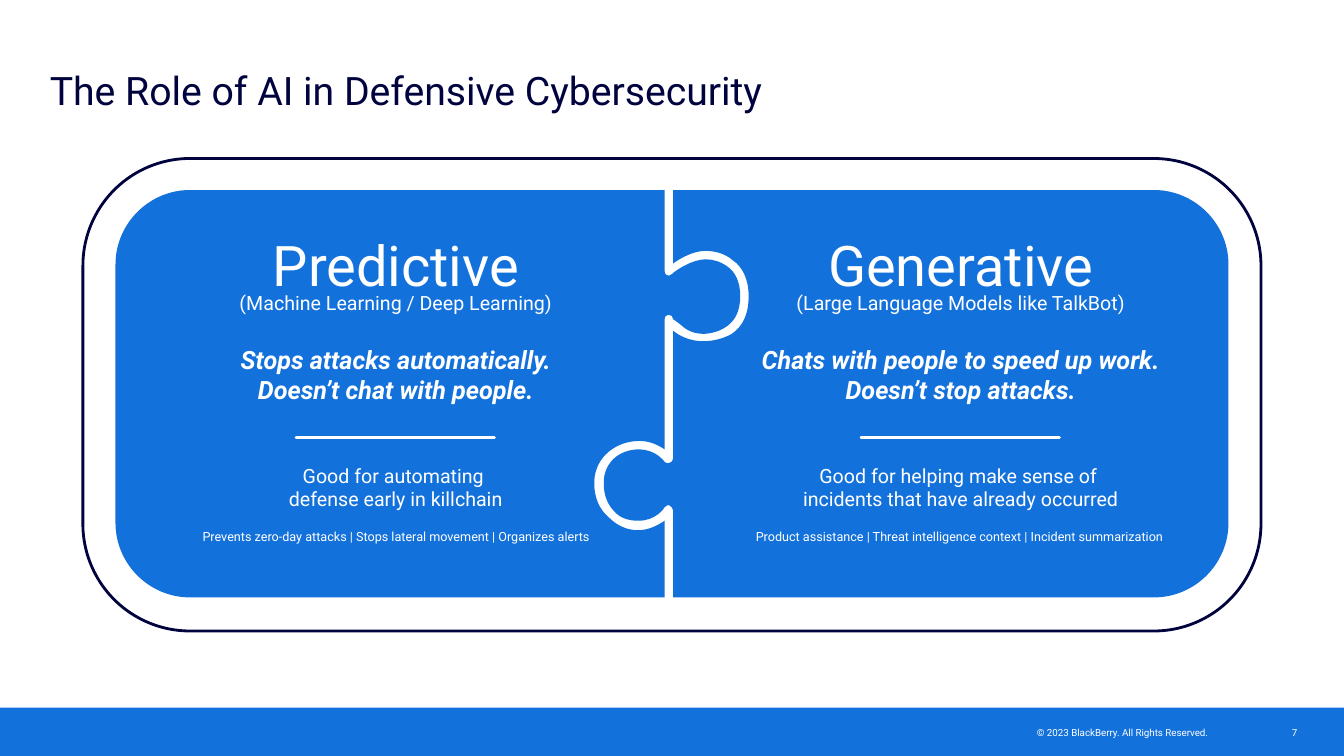
from dataclasses import dataclass

from lxml import etree
from pptx import Presentation
from pptx import util as u
from pptx.dml.color import RGBColor
from pptx.enum import shapes, text
from pptx.oxml.ns import qn

LEFT, CENTER, RIGHT = text.PP_ALIGN.LEFT, text.PP_ALIGN.CENTER, text.PP_ALIGN.RIGHT


@dataclass
class Theme:
    font: str = "Roboto"
    blue: str = "1371DC"
    navy: str = "00033E"
    white: str = "FFFFFF"
    title: int = 28
    heading: int = 40
    claim: int = 18
    body: int = 14
    detail: int = 9
    footer: int = 7
    stroke: int = 2


def px(value):
    """One scale for the whole page: 96 px to the inch."""
    return round(value * 9525)


class Painter:
    def __init__(self, page, theme):
        self.page, self.theme = page, theme

    def finish(self, shape, fill=None, line=None):
        shape.shadow.inherit = False
        if fill:
            shape.fill.solid()
            shape.fill.fore_color.rgb = RGBColor.from_string(fill)
        else:
            shape.fill.background()
        if line:
            shape.line.color.rgb = RGBColor.from_string(line)
            shape.line.width = u.Pt(self.theme.stroke)
        else:
            shape.line.fill.background()

    def rect(self, x, y, w, h, fill=None, line=None, radius=0):
        kind = shapes.MSO_SHAPE.ROUNDED_RECTANGLE if radius else shapes.MSO_SHAPE.RECTANGLE
        shape = self.page.shapes.add_shape(kind, px(x), px(y), px(w), px(h))
        if radius:
            shape.adjustments[0] = radius / min(w, h)
        self.finish(shape, fill, line)

    def outline(self, segments, fill):
        """Closed outline: pairs are straight ends, sixes are curves."""
        points = [(px(s[i]), px(s[i + 1])) for s in segments for i in range(0, len(s), 2)]
        builder = self.page.shapes.build_freeform(*points[0], scale=1.0)
        builder.add_line_segments(points[1:], close=True)
        shape = builder.convert_to_shape()
        # Join the three points of each six into one curve
        steps = iter(list(shape._element.iter(qn("a:lnTo"))))
        for segment in segments[1:]:
            step = next(steps)
            if len(segment) == 6:
                step.tag = qn("a:cubicBezTo")
                for follower in (next(steps), next(steps)):
                    step.append(follower[0])
                    follower.getparent().remove(follower)
        self.finish(shape, fill)

    def rule(self, x, y, w, color):
        line = self.page.shapes.add_connector(
            shapes.MSO_CONNECTOR.STRAIGHT, px(x), px(y), px(x + w), px(y))
        line.line.color.rgb = RGBColor.from_string(color)
        line.line.width = u.Pt(self.theme.stroke)
        properties = line._element.spPr
        properties.find(qn("a:ln")).set("cap", "rnd")
        etree.SubElement(properties, qn("a:effectLst"))

    def words(self, x, y, w, h, paragraphs, size, color, align=CENTER,
              strong=False, anchor=text.MSO_ANCHOR.TOP):
        """Each paragraph is a list of lines."""
        box = self.page.shapes.add_textbox(px(x), px(y), px(w), px(h))
        frame = box.text_frame
        frame.word_wrap = True
        frame.vertical_anchor = anchor
        for index, lines in enumerate(paragraphs):
            para = frame.add_paragraph() if index else frame.paragraphs[0]
            para.alignment = align
            for number, line in enumerate(lines):
                if number:
                    para.add_line_break()
                span = para.add_run()
                span.text = line
                span.font.name = self.theme.font
                span.font.size = u.Pt(size)
                span.font.bold = span.font.italic = strong
                span.font.color.rgb = RGBColor.from_string(color)


# Puzzle geometry: each tile's seam runs from top to bottom
TOP, BOTTOM, CORNER, HANDLE = 181, 569, 71, 32
LEFT_SEAM = [
    (633, TOP), (633, 258), (633, 260, 634, 262, 635, 262),
    (636, 263, 638, 263, 640, 261), (643, 258, 659, 247, 672, 247),
    (679, 247, 686, 249, 693, 254), (700, 259, 705, 268, 705, 282),
    (705, 298, 699, 306, 692, 311), (685, 316, 676, 318, 670, 318),
    (660, 318, 653, 314, 648, 309), (645, 307, 643, 305, 641, 304),
    (641, 303, 641, 302, 640, 301), (638, 300, 637, 300, 636, 300),
    (634, 300, 633, 302, 633, 304), (633, 428),
    (627, 424, 619, 420, 609, 420), (587, 420, 567, 435, 566, 458),
    (566, 461), (566, 474, 571, 485, 579, 492),
    (587, 500, 596, 505, 608, 505), (618, 505, 627, 500, 633, 496), (633, BOTTOM),
]
RIGHT_SEAM = [
    (641, TOP), (641, 251), (648, 246, 660, 239, 672, 239),
    (680, 239, 690, 241, 698, 248), (707, 254, 713, 266, 713, 282),
    (713, 300, 707, 311, 697, 318), (688, 323, 678, 325, 670, 325),
    (657, 325, 647, 320, 641, 315), (641, 437),
    (641, 439, 639, 441, 637, 441), (636, 442, 635, 441, 633, 440),
    (631, 437, 629, 436, 627, 434), (623, 431, 616, 428, 609, 428),
    (590, 428, 576, 440, 575, 458), (575, 461),
    (575, 472, 579, 481, 585, 487), (590, 493, 598, 496, 608, 496),
    (624, 496, 632, 485, 633, 483), (634, 482, 636, 481, 637, 481),
    (639, 482, 641, 484, 641, 486), (641, BOTTOM),
]


def tile(seam, outer, side):
    """Close a seam with two round corners; side is -1 for left, 1 for right."""
    inner, handle = outer - side * CORNER, outer - side * HANDLE
    return seam + [
        (inner, BOTTOM),
        (handle, BOTTOM, outer, BOTTOM - HANDLE, outer, BOTTOM - CORNER),
        (outer, TOP + CORNER),
        (outer, TOP + HANDLE, handle, TOP, inner, TOP),
    ]


def main():
    deck = Presentation()
    deck.slide_width, deck.slide_height = px(1280), px(720)
    theme = Theme()
    painter = Painter(deck.slides.add_slide(deck.slide_layouts[6]), theme)

    # Footer
    painter.rect(0, 674, 1280, 46, fill=theme.blue)
    painter.words(872, 687, 288, 21, [["© 2023 BlackBerry. All Rights Reserved."]],
                  theme.footer, theme.white, RIGHT)
    painter.words(1195, 686, 76, 23, [["7"]], theme.footer, theme.white,
                  anchor=text.MSO_ANCHOR.MIDDLE)

    # Frame and puzzle tiles
    painter.rect(79, 151, 1122, 450, line=theme.navy, radius=102)
    painter.outline(tile(RIGHT_SEAM, 1170, 1), theme.blue)
    painter.outline(tile(LEFT_SEAM, 110, -1), theme.blue)

    # Title
    painter.words(38, 58, 1180, 64, [["The Role of AI in Defensive Cybersecurity"]],
                  theme.title, theme.navy, LEFT)

    # Tile texts: rows of top, height, size, strong
    rows = [
        (215, 74, theme.heading, False),
        (272, 33, theme.body, False),
        (323, 68, theme.claim, True),
        (437, 55, theme.body, False),
        (499, 24, theme.detail, False),
    ]
    # Columns of centre and, for each row, width and paragraphs
    columns = [
        (377, [
            (339, [["Predictive"]]),
            (352, [["(Machine Learning / Deep Learning)"]]),
            (396, [["Stops attacks automatically."], ["Doesn’t chat with people."]]),
            (497, [["Good for automating ", "defense early in killchain"]]),
            (522, [["Prevents zero-day attacks | Stops lateral movement | Organizes alerts"]]),
        ]),
        (915, [
            (379, [["Generative"]]),
            (352, [["(Large Language Models like TalkBot)"]]),
            (426, [["Chats with people to speed up work."], ["Doesn’t stop attacks."]]),
            (396, [["Good for helping make sense of ", "incidents that have already occurred"]]),
            (522, [["Product assistance | Threat intelligence context | Incident summarization "]]),
        ]),
    ]
    for center, cells in columns:
        for (top, height, size, strong), (width, paragraphs) in zip(rows, cells):
            painter.words(center - width / 2, top, width, height, paragraphs,
                          size, theme.white, strong=strong)
        painter.rule(center - 95, 417, 189, theme.white)

    deck.save("out.pptx")


if __name__ == "__main__":
    main()
